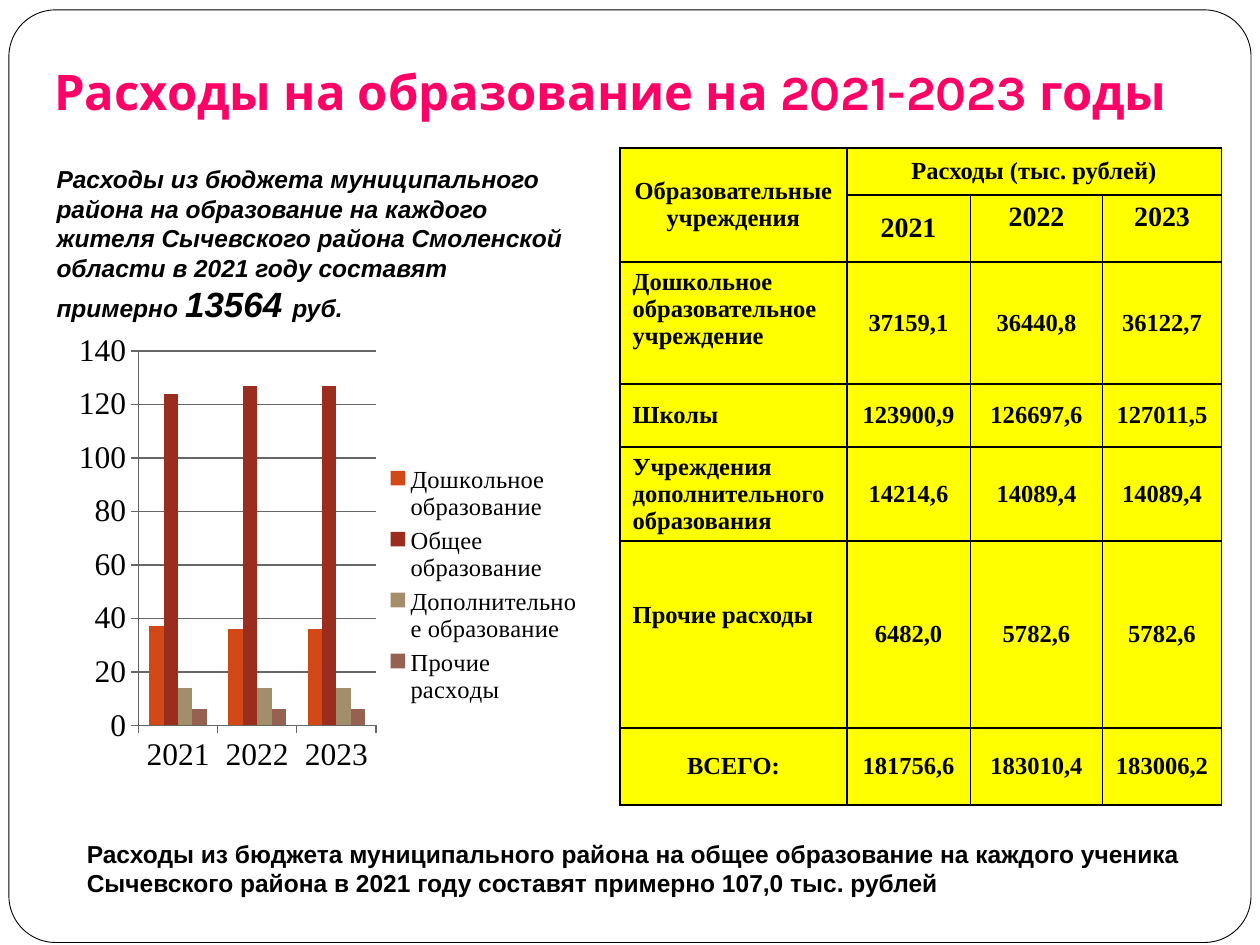
import pptx
import pptx.chart.data
import pptx.dml.color
import pptx.enum.chart
import pptx.enum.shapes
import pptx.enum.text
import pptx.oxml
import pptx.oxml.ns
import pptx.util
from dataclasses import dataclass

Cm = pptx.util.Cm
Pt = pptx.util.Pt
Align = pptx.enum.text.PP_ALIGN
Anchor = pptx.enum.text.MSO_ANCHOR
qn = pptx.oxml.ns.qn


@dataclass(frozen=True)
class Theme:
    ink: str = "000000"
    paper: str = "FFFFFF"
    pink: str = "FF0066"
    yellow: str = "FFFF00"
    grid: str = "666666"
    bars: tuple = ("D34817", "9B2D1F", "A28E6A", "956251")
    head: str = "Karla"
    sans: str = "Arial"
    serif: str = "Times New Roman"
    title: int = 28
    big: int = 20
    axis: int = 18
    year: int = 16
    body: int = 14


T = Theme()

YEARS = ["2021", "2022", "2023"]
ROWS = [
    ["Образовательные учреждения", "Расходы (тыс. рублей)", "", ""],
    ["", *YEARS],
    ["Дошкольное образовательное учреждение", "37159,1", "36440,8", "36122,7"],
    ["Школы", "123900,9", "126697,6", "127011,5"],
    ["Учреждения\nдополнительного\nобразования", "14214,6", "14089,4", "14089,4"],
    ["Прочие расходы", "6482,0", "5782,6", "5782,6"],
    ["ВСЕГО:", "181756,6", "183010,4", "183006,2"],
]
WIDTHS = [4.57, 2.49, 2.67, 2.39]
HEIGHTS = [0.95, 1.35, 2.46, 1.27, 1.9, 3.77, 1.55]
SERIES = {
    "Дошкольное образование": (37, 36, 36),
    "Общее образование": (124, 127, 127),
    "Дополнительное образование": (14, 14, 14),
    "Прочие расходы": (6, 6, 6),
}


def rgb(code):
    return pptx.dml.color.RGBColor.from_string(code)


def box(left, top, width, height):
    return Cm(left), Cm(top), Cm(width), Cm(height)


def style(font, face, size, color=T.ink, bold=True, slant=False):
    font.name, font.size = face, Pt(size)
    font.bold, font.italic = bold, slant
    font.color.rgb = rgb(color)


def add_card(slide):
    kind = pptx.enum.shapes.MSO_SHAPE.ROUNDED_RECTANGLE
    card = slide.shapes.add_shape(kind, *box(0.18, 0.2, 25.04, 18.8))
    card.adjustments[0] = 0.05
    card.shadow.inherit = False
    card.fill.solid()
    card.fill.fore_color.rgb = rgb(T.paper)
    card.line.color.rgb = rgb(T.ink)
    card.line.width = Pt(0.5)
    card._element.getparent().insert(2, card._element)


def add_title(slide, text):
    title = slide.shapes.title
    title.left, title.top, title.width, title.height = box(0, 0.71, 24.61, 1.96)
    frame = title.text_frame
    frame.text = text
    frame.auto_size = pptx.enum.text.MSO_AUTO_SIZE.NONE
    frame.vertical_anchor = Anchor.BOTTOM
    frame.margin_bottom = Cm(0.25)
    para = frame.paragraphs[0]
    para.alignment = Align.CENTER
    style(para.runs[0].font, T.head, T.title, T.pink)


def add_note(slide, place, parts, slant=False):
    frame = slide.shapes.add_textbox(*place).text_frame
    frame.word_wrap = True
    frame.vertical_anchor = Anchor.MIDDLE
    for text, size in parts:
        run = frame.paragraphs[0].add_run()
        run.text = text
        style(run.font, T.sans, size, slant=slant)


def add_edges(cell):
    props = cell._tc.get_or_add_tcPr()
    for side in "LRTB":
        props.append(pptx.oxml.parse_xml(
            f'<a:ln{side} xmlns:a="http://schemas.openxmlformats.org/drawingml/2006/main" w="12700">'
            f'<a:solidFill><a:srgbClr val="{T.ink}"/></a:solidFill></a:ln{side}>'))


def fill_cell(cell, text, size, align, anchor):
    add_edges(cell)
    cell.fill.solid()
    cell.fill.fore_color.rgb = rgb(T.yellow)
    cell.vertical_anchor = anchor
    cell.text_frame.text = text
    for para in cell.text_frame.paragraphs:
        para.alignment = align
        style(para.font, T.serif, size)
        for run in para.runs:
            style(run.font, T.serif, size)


def add_grid(slide):
    place = box(12.5, 2.98, sum(WIDTHS), sum(HEIGHTS))
    table = slide.shapes.add_table(len(ROWS), len(WIDTHS), *place).table
    for col, width in zip(table.columns, WIDTHS):
        col.width = Cm(width)
    for row, height in zip(table.rows, HEIGHTS):
        row.height = Cm(height)
    table.cell(0, 0).merge(table.cell(1, 0))
    table.cell(0, 1).merge(table.cell(0, 3))
    tops = {(1, 2), (1, 3), (2, 0), (5, 0)}
    for r, row in enumerate(ROWS):
        for c, text in enumerate(row):
            label = c == 0 and 2 <= r <= 5
            fill_cell(table.cell(r, c), text,
                      T.year if r == 1 and c else T.body,
                      Align.JUSTIFY if label else Align.CENTER,
                      Anchor.TOP if (r, c) in tops else Anchor.MIDDLE)
    table.cell(5, 0).margin_top = Cm(1.22)


def set_place(node, spot, inner=False):
    for old in node.findall(qn("c:layout")):
        node.remove(old)
    target = '<c:layoutTarget val="inner"/>' if inner else ""
    modes = "".join(f'<c:{k}Mode val="edge"/>' for k in "xy")
    sizes = "".join(f'<c:{k} val="{v}"/>' for k, v in zip("xywh", spot))
    layout = pptx.oxml.parse_xml(
        '<c:layout xmlns:c="http://schemas.openxmlformats.org/drawingml/2006/chart">'
        f'<c:manualLayout>{target}{modes}{sizes}</c:manualLayout></c:layout>')
    node.insert(0 if node.find(qn("c:legendPos")) is None else 1, layout)


def add_bars(slide):
    data = pptx.chart.data.CategoryChartData(number_format="General")
    data.categories = YEARS
    for name, values in SERIES.items():
        data.add_series(name, values)
    kind = pptx.enum.chart.XL_CHART_TYPE.COLUMN_CLUSTERED
    chart = slide.shapes.add_chart(kind, *box(0.79, 6.55, 11.13, 10.49), data).chart
    chart.has_title = False
    style(chart.font, T.serif, T.axis, bold=False)
    plot = chart.plots[0]
    plot.gap_width, plot.overlap = 150, 0
    plot.vary_by_categories = False
    for series, color in zip(plot.series, T.bars):
        series.format.fill.solid()
        series.format.fill.fore_color.rgb = rgb(color)
    axis = chart.value_axis
    axis.minimum_scale, axis.maximum_scale, axis.major_unit = 0, 140, 20
    axis.has_major_gridlines = True
    for part in (axis, axis.major_gridlines, chart.category_axis):
        part.format.line.color.rgb = rgb(T.grid)
    for part in (axis, chart.category_axis):
        part.major_tick_mark = pptx.enum.chart.XL_TICK_MARK.OUTSIDE
    chart.has_legend = True
    chart.legend.position = pptx.enum.chart.XL_LEGEND_POSITION.RIGHT
    chart.legend.include_in_layout = False
    style(chart.legend.font, T.serif, T.body, bold=False)
    set_place(chart._chartSpace.chart.plotArea, (0.18, 0.05, 0.43, 0.72), True)
    set_place(chart.legend._element, (0.63, 0.26, 0.35, 0.48))


def main():
    deck = pptx.Presentation()
    deck.slide_width, deck.slide_height = Cm(25.4), Cm(19.05)
    slide = deck.slides.add_slide(deck.slide_layouts[5])
    add_card(slide)
    add_title(slide, "Расходы на образование на 2021-2023 годы")
    add_grid(slide)
    add_note(slide, box(0.89, 3.12, 10.8, 3.61), [
        ("Расходы из бюджета муниципального района на образование на каждого жителя "
         "Сычевского района Смоленской области в 2021 году составят примерно ", T.body),
        ("13564 ", T.big), ("руб.", T.body)], slant=True)
    add_note(slide, box(1.5, 16.92, 22.86, 1.17), [
        ("Расходы из бюджета муниципального района на общее образование на каждого ученика "
         "Сычевского района в 2021 году составят примерно 107,0 тыс. рублей", T.body)])
    add_bars(slide)
    deck.save("out.pptx")


if __name__ == "__main__":
    main()
